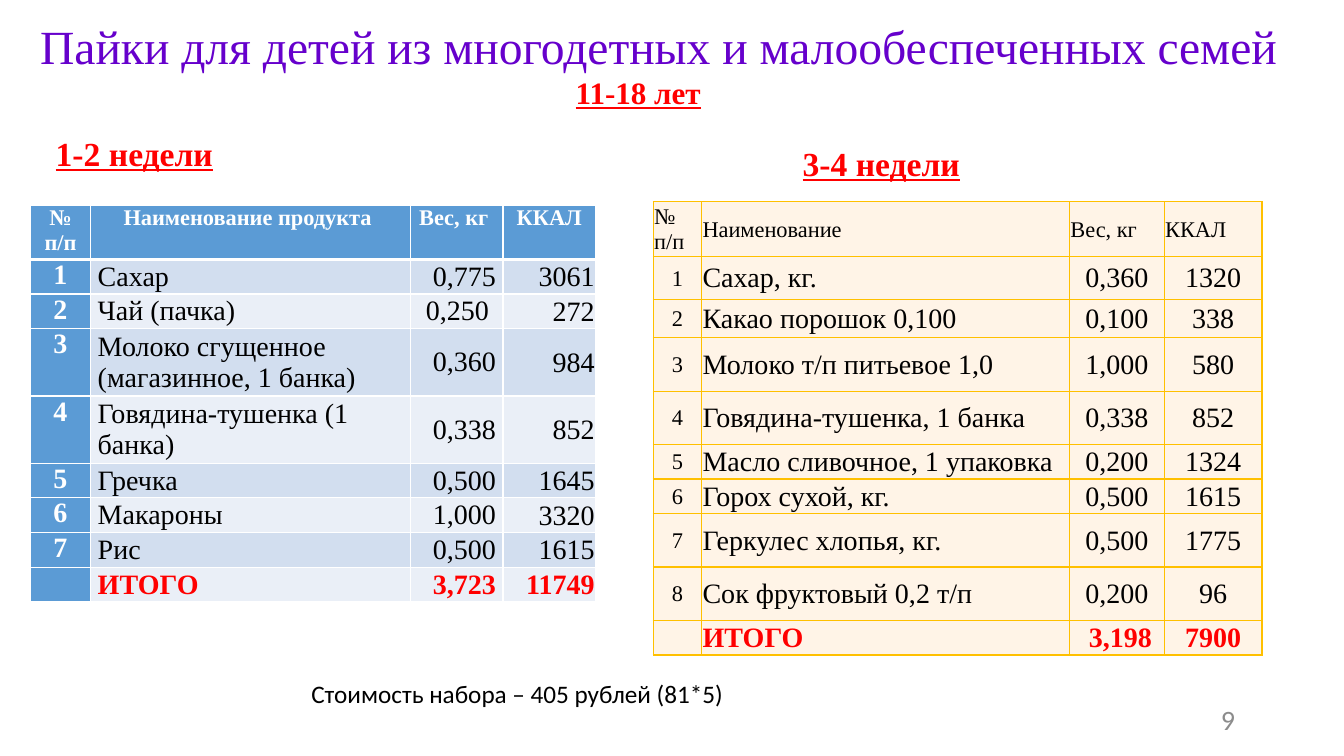
from dataclasses import dataclass
from lxml import etree
from pptx import Presentation
from pptx import util as u
from pptx.dml.color import RGBColor
from pptx.enum import text
from pptx.oxml.ns import qn

UNIT = u.Inches(0.1)
GRID_COLS, GRID_ROWS = 133.33, 75
LEFT, CENTER, RIGHT = text.PP_ALIGN.LEFT, text.PP_ALIGN.CENTER, text.PP_ALIGN.RIGHT
TOP, MIDDLE = text.MSO_ANCHOR.TOP, text.MSO_ANCHOR.MIDDLE


@dataclass(frozen=True)
class Theme:
    serif: str = "Times New Roman"
    sans: str = "Calibri"
    title: str = "6600CC"
    accent: str = "FF0000"
    ink: str = "000000"
    muted: str = "8C8C8C"
    white: str = "FFFFFF"
    blue: str = "5B9BD5"
    bands: tuple = ("D2DEEF", "EAEFF7")
    cream: str = "FFF4E7"
    gold: str = "FFC000"
    title_size: float = 34
    age_size: float = 22.2
    weeks_size: float = 24
    body_size: float = 20
    small_size: float = 16
    note_size: float = 18


T = Theme()

WEEKS_1_2 = [
    ("№ п/п", "Наименование продукта ", "Вес, кг ", "ККАЛ"),
    ("1", "Сахар", "0,775", "3061"),
    ("2", "Чай (пачка)", "0,250 ", "272"),
    ("3", "Молоко сгущенное (магазинное, 1 банка)", "0,360", "984"),
    ("4", "Говядина-тушенка (1 банка)", "0,338", "852"),
    ("5", "Гречка", "0,500", "1645"),
    ("6", "Макароны", "1,000", "3320"),
    ("7", "Рис", "0,500", "1615"),
    ("", "ИТОГО", "3,723", "11749"),
]
WEEKS_3_4 = [
    ("№ п/п", "Наименование", "Вес, кг", "ККАЛ"),
    ("1", "Сахар, кг.", "0,360", "1320"),
    ("2", "Какао порошок 0,100", "0,100", "338"),
    ("3", "Молоко т/п питьевое 1,0", "1,000", "580"),
    ("4", "Говядина-тушенка, 1 банка", "0,338", "852"),
    ("5", "Масло сливочное, 1 упаковка", "0,200", "1324"),
    ("6", "Горох сухой, кг.", "0,500", "1615"),
    ("7", "Геркулес хлопья, кг.", "0,500", "1775"),
    ("8", "Сок фруктовый 0,2 т/п", "0,200", "96"),
    ("", "ИТОГО", " 3,198", "7900"),
]


def grid(*lengths):
    return [round(n * UNIT) for n in lengths]


def write(tf, words, size, color, font=T.serif, bold=False, underline=False, align=LEFT):
    tf.text = words
    p = tf.paragraphs[0]
    p.alignment = align
    for r in p.runs:
        r.font.size = u.Pt(size)
        r.font.name = font
        r.font.bold = bold
        r.font.underline = underline
        r.font.color.rgb = RGBColor.from_string(color)
    return p


def add_label(s, box, words, size, color, anchor=TOP, spacing=None, before=None, **style):
    tf = s.shapes.add_textbox(*grid(*box)).text_frame
    tf.word_wrap = True
    tf.vertical_anchor = anchor
    p = write(tf, words, size, color, **style)
    p.line_spacing = spacing
    p.space_before = before


def add_heading(s, box, words, size):
    add_label(s, box, words, size, T.accent, spacing=0.9, before=u.Pt(10),
              bold=True, underline=True, align=RIGHT)


def set_borders(cell, color, bottom):
    tc_pr = cell._tc.get_or_add_tcPr()
    for side, width in (("L", 1), ("R", 1), ("T", 1), ("B", bottom)):
        ln = etree.SubElement(tc_pr, qn("a:ln" + side), w=str(u.Pt(width)))
        fill = etree.SubElement(ln, qn("a:solidFill"))
        etree.SubElement(fill, qn("a:srgbClr"), val=color)


def add_ration(s, box, rows, widths, heights, style):
    tbl = s.shapes.add_table(len(rows), len(widths), *grid(*box)).table
    tbl.first_row = tbl.horz_banding = False
    for lines, shares, name, extent in ((tbl.columns, widths, "width", box[2]),
                                        (tbl.rows, heights, "height", box[3])):
        for line, share in zip(lines, shares):
            setattr(line, name, round(extent * UNIT * share / sum(shares)))
    for i, row in enumerate(rows):
        for j, words in enumerate(row):
            style(tbl.cell(i, j), i, j, words, i == len(rows) - 1)


def set_insets(cell, side, top):
    cell.margin_left = cell.margin_right = u.Inches(side)
    cell.margin_top = u.Inches(top)
    cell.margin_bottom = 0


def paint(cell, color):
    cell.fill.solid()
    cell.fill.fore_color.rgb = RGBColor.from_string(color)


def style_blue(cell, i, j, words, total):
    head = i == 0 or j == 0
    if j == 3 and i:
        set_insets(cell, 0.01, 0.01)
    else:
        set_insets(cell, 0.07, 0)
    cell.vertical_anchor = TOP if head else MIDDLE
    set_borders(cell, T.white, 1 if i else 3)
    paint(cell, T.blue if head else T.bands[(i - 1) % 2])
    color = T.white if head else T.accent if total else T.ink
    write(cell.text_frame, words, T.body_size if i else T.small_size, color,
          bold=head or total, align=CENTER if head else LEFT if j == 1 else RIGHT)


def style_cream(cell, i, j, words, total):
    set_insets(cell, 0.01, 0.01)
    cell.vertical_anchor = MIDDLE
    set_borders(cell, T.gold, 1)
    paint(cell, T.cream)
    write(cell.text_frame, words, T.body_size if i and j else T.small_size,
          T.accent if total else T.ink, bold=total,
          align=LEFT if i == 0 or j == 1 else CENTER)


def build_ration_slide(prs):
    s = prs.slides.add_slide(prs.slide_layouts[6])
    add_label(s, (3, 1.7, 130.3, 6.4), "Пайки для детей из многодетных и малообеспеченных семей",
              T.title_size, T.title, anchor=MIDDLE, spacing=0.9)
    add_label(s, (93.5, 69.4, 30, 4), "9", T.note_size + 2, T.muted,
              anchor=MIDDLE, font=T.sans, align=RIGHT)
    add_heading(s, (55.4, 7.2, 15.1, 5.9), "11-18 лет", T.age_size)
    add_heading(s, (-11.5, 13.1, 33.6, 5.9), "1-2 недели", T.weeks_size)
    add_heading(s, (62.6, 14.1, 33.6, 5.9), "3-4 недели", T.weeks_size)
    add_ration(s, (64.8, 20, 60.4, 43.8), WEEKS_3_4, (48, 365, 94, 97),
               (50, 43, 38, 53, 53, 32, 32, 53, 53, 32), style_cream)
    add_ration(s, (3, 20.4, 56.1, 36.5), WEEKS_1_2, (60, 317, 92, 92),
               (49, 32, 32, 62, 62, 32, 32, 32, 32), style_blue)
    add_label(s, (29.9, 66.8, 47, 4), "Стоимость набора – 405 рублей (81*5)",
              T.note_size, T.ink, font=T.sans)


def main():
    prs = Presentation()
    prs.slide_width, prs.slide_height = grid(GRID_COLS, GRID_ROWS)
    build_ration_slide(prs)
    prs.save("out.pptx")


if __name__ == "__main__":
    main()
